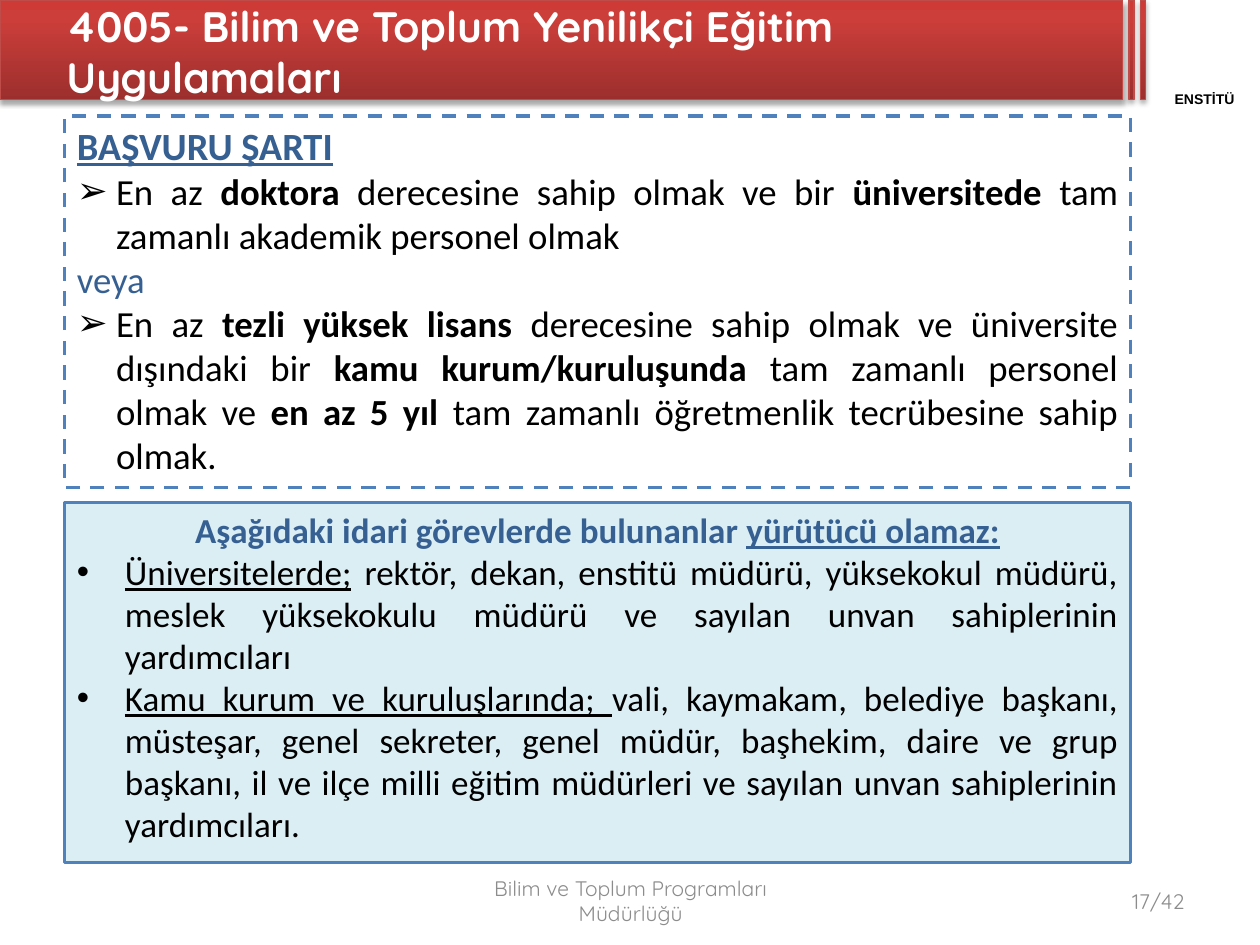
from lxml import etree
from pptx import Presentation
from pptx.dml.color import RGBColor
from pptx.enum.dml import MSO_LINE
from pptx.enum.shapes import MSO_SHAPE
from pptx.enum.text import MSO_ANCHOR, MSO_AUTO_SIZE, PP_ALIGN
from pptx.oxml.ns import qn
from pptx.util import Cm, Pt

LEFT, CENTER, RIGHT, JUSTIFY = PP_ALIGN.LEFT, PP_ALIGN.CENTER, PP_ALIGN.RIGHT, PP_ALIGN.JUSTIFY
TOP, MIDDLE = MSO_ANCHOR.TOP, MSO_ANCHOR.MIDDLE
FIT_SHAPE = MSO_AUTO_SIZE.SHAPE_TO_FIT_TEXT
DASH = MSO_LINE.DASH
RECTANGLE = MSO_SHAPE.RECTANGLE

COLORS = {
    "black": "000000",
    "white": "FFFFFF",
    "gray": "8C8C8C",
    "heading": "376092",
    "border": "4F81BD",
    "pale": "DBEEF4",
    "band_line": "BF4C48",
}
BAND_STOPS = [(0, "9C2F2D"), (80, "CB3E3A"), (100, "CE3B37")]


def color(name):
    return RGBColor.from_string(COLORS[name])


def add_run(paragraph, text, font="Calibri", size=20, fill="black", bold=False, underline=False):
    run = paragraph.add_run()
    run.text = text
    run.font.name = font
    run.font.size = Pt(size)
    run.font.bold = bold
    run.font.underline = underline
    run.font.color.rgb = color(fill)


def add_bullet(paragraph, character, indent):
    properties = paragraph._p.get_or_add_pPr()
    properties.set("marL", str(Cm(indent)))
    properties.set("indent", str(-Cm(indent)))
    etree.SubElement(properties, qn("a:buFont"), typeface="Arial")
    etree.SubElement(properties, qn("a:buChar"), char=character)


class SlideBuilder:
    def __init__(self, slide, text_size=20):
        self.slide = slide
        self.text_size = text_size

    def rectangle(self, left, top, width, height, line, line_width):
        shape = self.slide.shapes.add_shape(RECTANGLE, Cm(left), Cm(top), Cm(width), Cm(height))
        shape.shadow.inherit = False
        shape.line.color.rgb = color(line)
        shape.line.width = Pt(line_width)
        return shape

    def band(self, left, width):
        shape = self.rectangle(left, 0, width, 2.01, "band_line", 0.75)
        shape.fill.gradient()
        shape.fill.gradient_angle = 90
        properties = shape._element.spPr
        stops = properties.find(qn("a:gradFill")).find(qn("a:gsLst"))
        for stop in list(stops):
            stops.remove(stop)
        for position, value in BAND_STOPS:
            stop = etree.SubElement(stops, qn("a:gs"), pos=str(position * 1000))
            etree.SubElement(stop, qn("a:srgbClr"), val=value)
        shadow = etree.SubElement(
            properties.find(qn("a:effectLst")), qn("a:outerShdw"),
            blurRad=str(Pt(3.1)), dist=str(Pt(1.8)), dir="5400000", rotWithShape="0",
        )
        shadow_color = etree.SubElement(shadow, qn("a:srgbClr"), val=COLORS["black"])
        etree.SubElement(shadow_color, qn("a:alpha"), val="35000")

    def label(self, text, left, top, width, height, align=LEFT, anchor=MIDDLE, margins=None, **style):
        shape = self.slide.shapes.add_textbox(Cm(left), Cm(top), Cm(width), Cm(height))
        frame = shape.text_frame
        frame.word_wrap = True
        frame.vertical_anchor = anchor
        for side, margin in (margins or {}).items():
            setattr(frame, f"margin_{side}", Cm(margin))
        paragraph = frame.paragraphs[0]
        paragraph.alignment = align
        add_run(paragraph, text, **style)

    def panel(self, top, height, fill, paragraphs, dash=None):
        shape = self.rectangle(1.3, top, 21.49, height, "border", 2)
        shape.fill.solid()
        shape.fill.fore_color.rgb = color(fill)
        if dash is not None:
            shape.line.dash_style = dash
        frame = shape.text_frame
        frame.word_wrap = True
        frame.vertical_anchor = TOP
        frame.auto_size = FIT_SHAPE
        for index, (align, bullet, runs) in enumerate(paragraphs):
            paragraph = frame.add_paragraph() if index else frame.paragraphs[0]
            paragraph.alignment = align
            if bullet:
                add_bullet(paragraph, *bullet)
            for text, style in runs:
                add_run(paragraph, text, **{"size": self.text_size, **style})


PLAIN = {}
BOLD = {"bold": True}
UNDERLINED = {"underline": True}
HEADING = {"fill": "heading", "bold": True}
ARROW = ("➢", 0.79)
DOT = ("•", 0.97)

REQUIREMENTS = [
    (LEFT, None, [("BAŞVURU ŞARTI", {**HEADING, **UNDERLINED, "size": 22})]),
    (JUSTIFY, ARROW, [
        ("En az ", PLAIN),
        ("doktora", BOLD),
        (" derecesine sahip olmak ve bir ", PLAIN),
        ("üniversitede", BOLD),
        (" tam zamanlı akademik personel olmak", PLAIN),
    ]),
    (JUSTIFY, None, [("veya", {"fill": "heading"})]),
    (JUSTIFY, ARROW, [
        ("En az ", PLAIN),
        ("tezli yüksek lisans ", BOLD),
        ("derecesine sahip olmak ve üniversite dışındaki bir ", PLAIN),
        ("kamu kurum/kuruluşunda ", BOLD),
        ("tam zamanlı personel olmak ve ", PLAIN),
        ("en az 5 yıl ", BOLD),
        ("tam zamanlı öğretmenlik tecrübesine sahip olmak.", PLAIN),
    ]),
]
EXCLUSIONS = [
    (CENTER, None, [
        ("Aşağıdaki idari görevlerde bulunanlar ", HEADING),
        ("yürütücü olamaz:", {**HEADING, **UNDERLINED}),
    ]),
    (JUSTIFY, DOT, [
        ("Üniversitelerde;", UNDERLINED),
        (" rektör, dekan, enstitü müdürü, yüksekokul müdürü, meslek yüksekokulu müdürü "
         "ve sayılan unvan sahiplerinin yardımcıları", PLAIN),
    ]),
    (JUSTIFY, DOT, [
        ("Kamu kurum ve kuruluşlarında; ", UNDERLINED),
        ("vali, kaymakam, belediye başkanı, müsteşar, genel sekreter, genel müdür, başhekim, "
         "daire ve grup başkanı, il ve ilçe milli eğitim müdürleri ve sayılan unvan "
         "sahiplerinin yardımcıları.", PLAIN),
    ]),
]


def main():
    presentation = Presentation()
    presentation.slide_width = Cm(25.4)
    presentation.slide_height = Cm(19.05)
    builder = SlideBuilder(presentation.slides.add_slide(presentation.slide_layouts[6]))

    for left, width in [(0, 22.63), (22.76, 0.1), (22.99, 0.1)]:
        builder.band(left, width)
    builder.label("ENSTİTÜ", 22.99, 1.83, 2.59, 0.33, align=CENTER, anchor=TOP,
                  margins=dict.fromkeys(("left", "top", "right", "bottom"), 0),
                  font="Arial", size=8, bold=True)
    footer = {"font": "Quicksand", "size": 12, "fill": "gray"}
    builder.label("Bilim ve Toplum Programları Müdürlüğü", 8.69, 17.65, 8.05, 1.02,
                  align=CENTER, **footer)
    builder.label("17/42", 18.21, 17.65, 5.92, 1.02, align=RIGHT, **footer)
    builder.label("4005- Bilim ve Toplum Yenilikçi Eğitim Uygulamaları", 1.09, 0, 21.59, 2.34,
                  margins={"bottom": 0.4}, font="Quicksand", size=24.3, fill="white", bold=True)

    builder.text_size = 21
    builder.panel(2.34, 7.49, "white", REQUIREMENTS, dash=DASH)
    builder.text_size = 20
    builder.panel(10.13, 7.26, "pale", EXCLUSIONS)
    presentation.save("out.pptx")


if __name__ == "__main__":
    main()
